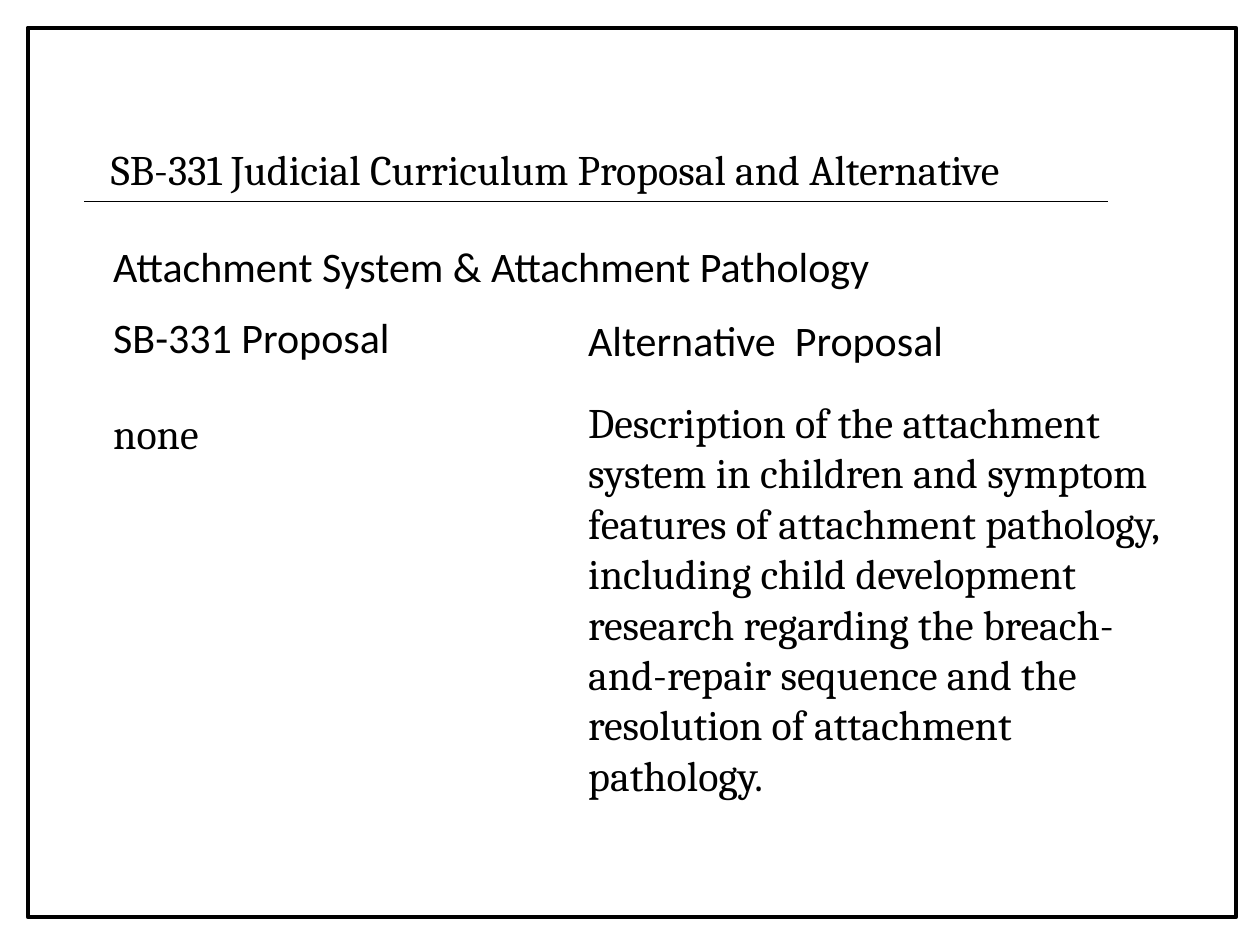
"""Build the slide comparing the SB-331 judicial curriculum with an alternative."""
from lxml.etree import SubElement
from pptx import Presentation
from pptx.dml.color import RGBColor
from pptx.enum.shapes import MSO_CONNECTOR as Connector, MSO_SHAPE as Shape
from pptx.enum.text import MSO_ANCHOR as Anchor, PP_ALIGN as Align
from pptx.oxml.ns import qn
from pptx.util import Inches, Pt

COLORS = {"ink": "000000"}
HEADING_FONT = "Calibri"
BODY_FONT = "Cambria"
TEXT_SIZE = 24
LEFT_MARGIN = 0.8


def color(name):
    """Return the named colour."""
    return RGBColor.from_string(COLORS[name])


def format_paragraph(paragraph, text, font, line=1.0, before=0, after=0):
    """Fill a paragraph and set its spacing and type."""
    paragraph.text = text
    paragraph.alignment = Align.LEFT
    paragraph.line_spacing = line
    paragraph.space_before = Pt(before)
    paragraph.space_after = Pt(after)
    for run in paragraph.runs:
        run.font.name = font
        run.font.size = Pt(TEXT_SIZE)
        run.font.color.rgb = color("ink")


def set_title(slide, text, left, top, width, height):
    """Place and format the title placeholder."""
    title = slide.shapes.title
    title.left, title.top = Inches(left), Inches(top)
    title.width, title.height = Inches(width), Inches(height)
    title.text_frame.vertical_anchor = Anchor.TOP
    format_paragraph(title.text_frame.paragraphs[0], text, BODY_FONT, line=1.07, after=6)


def add_text(slide, left, top, width, height, paragraphs):
    """Add a wrapped text box from paragraph settings."""
    box = slide.shapes.add_textbox(Inches(left), Inches(top), Inches(width), Inches(height))
    frame = box.text_frame
    frame.word_wrap = True
    for index, settings in enumerate(paragraphs):
        paragraph = frame.add_paragraph() if index else frame.paragraphs[0]
        format_paragraph(paragraph, **settings)


def add_rule(slide, left, right, top):
    """Add the thin horizontal line below the title."""
    rule = slide.shapes.add_connector(
        Connector.STRAIGHT, Inches(left), Inches(top), Inches(right), Inches(top)
    )
    rule.line.color.rgb = color("ink")
    rule.line.width = Pt(0.5)
    SubElement(rule._element.spPr, qn("a:effectLst"))


def add_border(slide, left, top, width, height):
    """Add the unfilled frame around the slide."""
    border = slide.shapes.add_shape(
        Shape.RECTANGLE, Inches(left), Inches(top), Inches(width), Inches(height)
    )
    border.shadow.inherit = False
    border.fill.background()
    border.line.color.rgb = color("ink")
    border.line.width = Pt(2.25)


def main():
    """Build and save the presentation."""
    presentation = Presentation()
    presentation.slide_width, presentation.slide_height = Inches(10), Inches(7.5)
    slide = presentation.slides.add_slide(presentation.slide_layouts[5])

    set_title(slide, "SB-331 Judicial Curriculum Proposal and Alternative", 0.78, 1.06, 8.19, 0.51)
    add_text(slide, LEFT_MARGIN, 2.42, 4.07, 1.25, [
        {"text": "SB-331 Proposal", "font": HEADING_FONT, "after": 18},
        {"text": "none", "font": BODY_FONT, "line": 1.07, "before": 6, "after": 18},
    ])
    add_text(slide, 4.57, 2.42, 4.9, 4.02, [
        {"text": "Alternative  Proposal", "font": HEADING_FONT, "line": 1.07},
        {
            "text": "Description of the attachment system in children and symptom features "
                    "of attachment pathology, including child development research regarding "
                    "the breach-and-repair sequence and the resolution of attachment pathology.",
            "font": BODY_FONT,
            "before": 18,
        },
    ])
    add_rule(slide, 0.67, 8.79, 1.6)
    add_border(slide, 0.22, 0.22, 9.59, 7.06)
    add_text(slide, LEFT_MARGIN, 1.86, 7.21, 0.5, [
        {"text": "Attachment System & Attachment Pathology", "font": HEADING_FONT},
    ])
    presentation.save("out.pptx")


if __name__ == "__main__":
    main()
